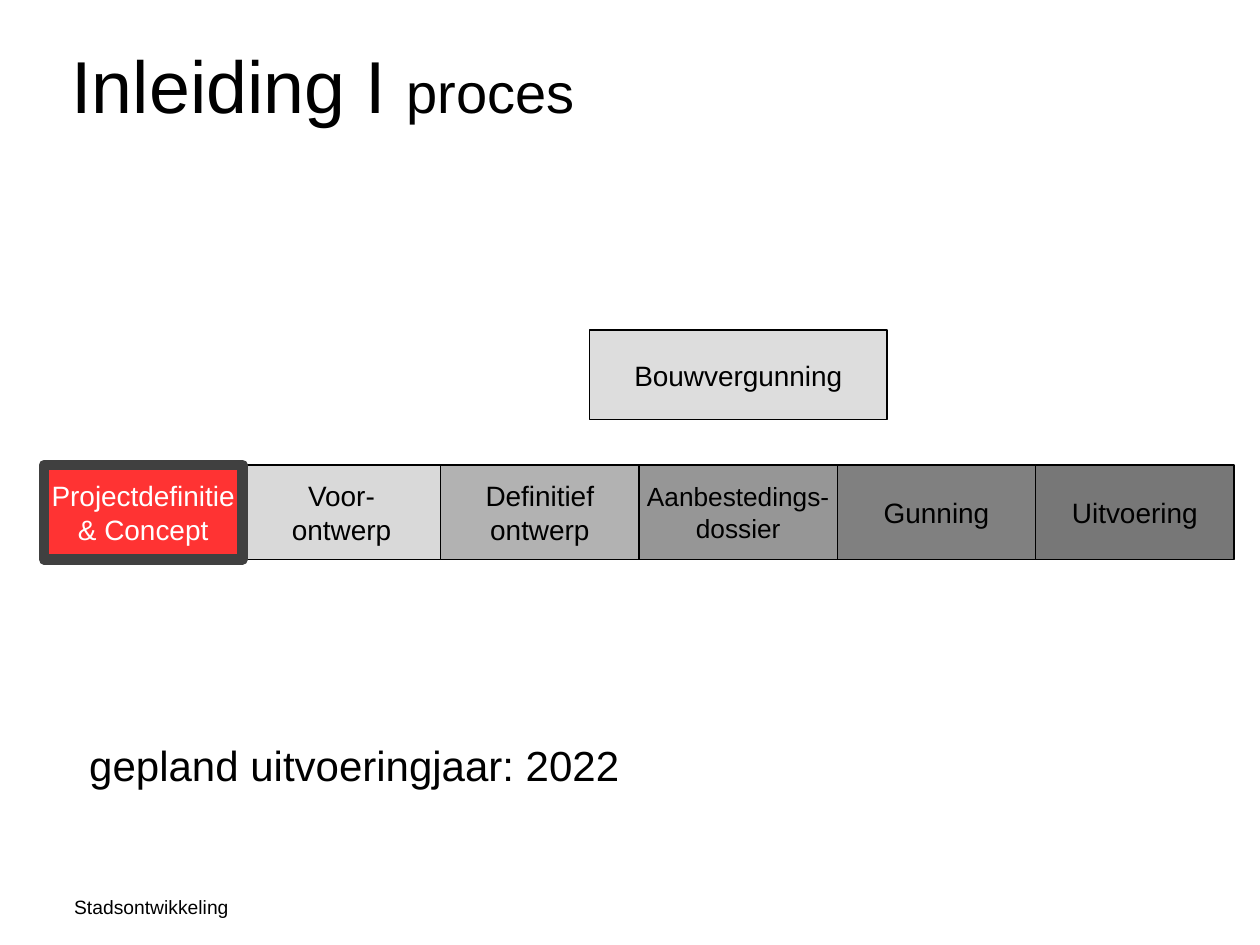
from lxml.etree import SubElement
from pptx import Presentation
from pptx.dml.color import RGBColor
from pptx.enum.shapes import MSO_SHAPE
from pptx.enum.text import MSO_ANCHOR, PP_ALIGN
from pptx.oxml.ns import qn
from pptx.util import Inches, Pt

FONT = "Arial"
COLORS = {
    "text": "000000",
    "active": "FF0000",
    "active_border": "404040",
    "active_text": "FFFFFF",
    "permit": "DDDDDD",
    "preliminary": "D9D9D9",
    "final": "B2B2B2",
    "tender": "969696",
    "award": "808080",
    "execution": "777777",
}
PHASES = [
    ("Projectdefinitie\n& Concept", "active", 16),
    ("Voor-\nontwerp", "preliminary", 16),
    ("Definitief\nontwerp", "final", 16),
    ("Aanbestedings-\ndossier", "tender", 15),
    ("Gunning", "award", 16),
    ("Uitvoering", "execution", 16),
]
PHASES_LEFT, PHASES_TOP, PHASES_HEIGHT = 0.35, 3.69, 0.75
PHASE_WIDTH = (8.22 - PHASES_LEFT) / 5


def rgb(name):
    return RGBColor.from_string(COLORS[name])


def style_font(font, size, color="text"):
    font.name = FONT
    font.size = Pt(size)
    font.color.rgb = rgb(color)


def add_label(slide, left, top, width, height, text, size):
    label = slide.shapes.add_textbox(
        Inches(left), Inches(top), Inches(width), Inches(height))
    frame = label.text_frame
    frame.word_wrap = True
    frame.text = text
    style_font(frame.paragraphs[0].font, size)
    return frame


def add_title(slide, topic, subject):
    """Add a title with a smaller subject behind the topic."""
    frame = add_label(slide, 0.47, 0, 9.32, 1.07, topic, 42)
    frame.vertical_anchor = MSO_ANCHOR.BOTTOM
    subject_run = frame.paragraphs[0].add_run()
    subject_run.text = subject
    subject_run.font.size = Pt(32)


def add_step(slide, left, top, width, height, text, fill, size=16):
    step = slide.shapes.add_shape(
        MSO_SHAPE.RECTANGLE,
        Inches(left), Inches(top), Inches(width), Inches(height))
    step.shadow.inherit = False
    step.fill.solid()
    step.fill.fore_color.rgb = rgb(fill)
    step.line.color.rgb = rgb("text")
    step.line.width = Pt(0.75)
    frame = step.text_frame
    frame.word_wrap = False
    frame.vertical_anchor = MSO_ANCHOR.MIDDLE
    frame.text = text
    for paragraph in frame.paragraphs:
        paragraph.alignment = PP_ALIGN.CENTER
        style_font(paragraph.font, size)
    return step


def highlight(step):
    """Mark the current phase with a thick border and a translucent fill."""
    step.line.color.rgb = rgb("active_border")
    step.line.width = Pt(6)
    fill_color = step.fill._xPr.find(qn("a:solidFill")).find(qn("a:srgbClr"))
    SubElement(fill_color, qn("a:alpha"), val="80000")
    for paragraph in step.text_frame.paragraphs:
        paragraph.font.color.rgb = rgb("active_text")


def add_phases(slide):
    """Add the phases from last to first, so the current one lies on top."""
    for index, (text, fill, size) in reversed(list(enumerate(PHASES))):
        step = add_step(slide, PHASES_LEFT + index * PHASE_WIDTH, PHASES_TOP,
                        PHASE_WIDTH, PHASES_HEIGHT, text, fill, size)
        if fill == "active":
            highlight(step)


def main():
    presentation = Presentation()
    presentation.slide_width = Inches(10)
    presentation.slide_height = Inches(7.5)
    slide = presentation.slides.add_slide(presentation.slide_layouts[6])

    add_label(slide, 0.49, 7.06, 3.62, 0.29, "Stadsontwikkeling", 11)
    add_label(slide, 0.61, 5.82, 9.18, 0.5, "gepland uitvoeringjaar: 2022", 24)
    add_step(slide, 4.68, 2.62, 2.36, 0.71, "Bouwvergunning", "permit")
    add_phases(slide)
    add_title(slide, "Inleiding Ι ", "proces")

    presentation.save("out.pptx")


if __name__ == "__main__":
    main()
